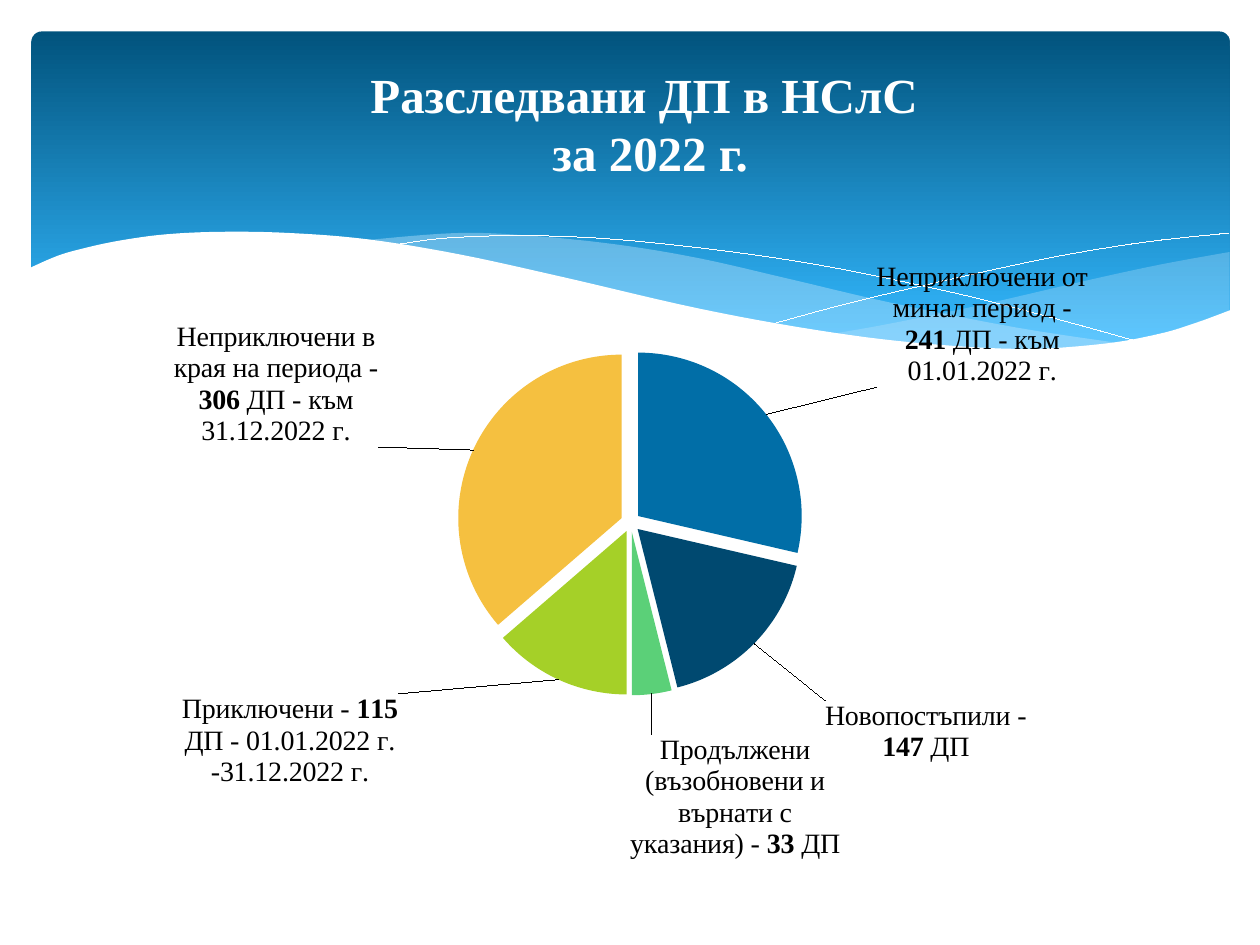
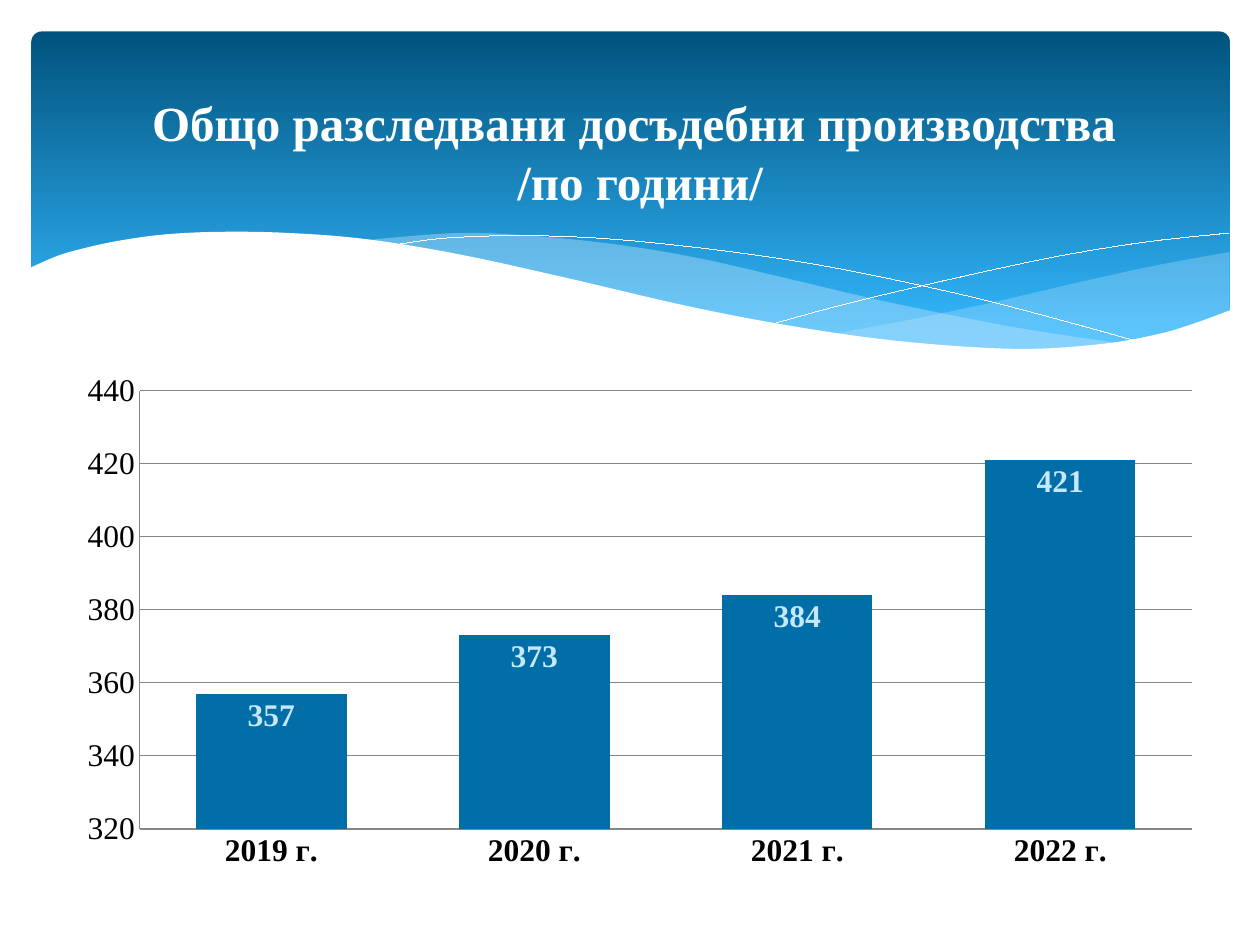
import pptx
import pptx.chart.data
import pptx.dml.color
import pptx.enum.chart
import pptx.enum.shapes
import pptx.enum.text
import pptx.oxml.ns
import pptx.util

Inches, Pt = pptx.util.Inches, pptx.util.Pt
RGBColor = pptx.dml.color.RGBColor
qn = pptx.oxml.ns.qn

# Shared look
FONT = "Times New Roman"
CHART_FONT = "Calibri"
WHITE = RGBColor(0xFF, 0xFF, 0xFF)
BLACK = RGBColor(0, 0, 0)
GRID = RGBColor(0x86, 0x86, 0x86)
BAND_TOP = RGBColor(0x01, 0x53, 0x7D)
BAND_BOTTOM = RGBColor(0x33, 0xB8, 0xFE)
PALE = RGBColor(0xC6, 0xE7, 0xFC)
BLUE = RGBColor(0x01, 0x6E, 0xA7)
NAVY = RGBColor(0x00, 0x49, 0x70)
GREEN = RGBColor(0x5B, 0xD0, 0x78)
LIME = RGBColor(0xA5, 0xD0, 0x28)
AMBER = RGBColor(0xF5, 0xC0, 0x40)

# Waves under the title band: each outline is a run of smooth curves
RIGHT_WAVE = [
    [(9.76, 2), (9.21, 2.1), (8.61, 2.23), (7.79, 2.42), (7.06, 2.57), (6.61, 2.65)],
    [(6.61, 2.65), (7.05, 2.71), (7.57, 2.76), (8.14, 2.78), (8.72, 2.74),
     (9.28, 2.63), (9.76, 2.47)],
]
LEFT_WAVE = [
    [(8.93, 2.73), (8.07, 2.6), (7.06, 2.4), (6.29, 2.22), (5.55, 2.05), (4.89, 1.94),
     (4.2, 1.87), (3.61, 1.85), (2.86, 1.91)],
    [(2.86, 1.91), (3.62, 2.03), (4.49, 2.22), (5.3, 2.4), (6.01, 2.55), (6.8, 2.68),
     (7.48, 2.76), (8.18, 2.78), (8.93, 2.73)],
]
FALLING_LINE = [
    [(3.09, 1.95), (3.53, 1.89), (4.16, 1.87), (4.89, 1.9), (5.82, 2), (6.65, 2.13),
     (7.6, 2.33), (8.31, 2.51), (9.07, 2.72)],
]
RISING_LINE = [
    [(6.13, 2.57), (6.72, 2.41), (7.48, 2.23), (8.36, 2.04), (9.1, 1.92), (9.75, 1.85)],
]
WHITE_WAVE = [
    [(9.77, 2.46), (9.5, 2.56), (9.2, 2.65), (8.75, 2.73), (8.09, 2.77), (7.26, 2.72),
     (6.48, 2.62), (5.55, 2.45), (4.47, 2.2), (3.65, 2.02), (2.92, 1.9), (2.3, 1.85),
     (1.77, 1.84), (1.32, 1.86), (0.95, 1.91), (0.67, 1.97), (0.46, 2.03), (0.23, 2.13)],
    [(0.23, 3.29), (9.77, 3.29)],
]

# Slide 1: category, value, colour, label (text, bold), label shift in inches
PIE_TITLE = "Разследвани ДП в НСлС \vза 2022 г."
PIE_SLICES = [
    ("неприключени от минал период", 241, BLUE,
     [("Неприключени от минал период - ", False), ("241", True),
      (" ДП - към 01.01.2022 г.", False)], (0.83, -0.18)),
    ("новопостъпили", 147, NAVY,
     [("Новопостъпили - ", False), ("147", True), (" ДП", False)], (0.52, 0.41)),
    ("продължени(възобновени и върнати)", 33, GREEN,
     [("Продължени (възобновени и върнати с указания) - ", False), ("33", True),
      (" ДП", False)], (-0.18, 0.26)),
    ("приключени", 115, LIME,
     [("Приключени - ", False), ("115", True),
      (" ДП - 01.01.2022 г. -31.12.2022 г.", False)], (-1.25, 0.06)),
    ("неприключени в края на периода", 306, AMBER,
     [("Неприключени в края на периода - ", False), ("306", True),
      (" ДП - към 31.12.2022 г.", False)], (-0.7, 0)),
]
PIE_BOX = (0.59, 2.02, 8.78, 5.2)
PIE_PLOT = (2.03, 0.75, 4.77, 2.75)

# Slide 2
YEARS_TITLE = "Общо разследвани досъдебни производства \v/по години/"
YEARS = [("2019 г.", 357), ("2020 г.", 373), ("2021 г.", 384), ("2022 г.", 421)]
YEARS_BOX = (0.51, 2.88, 9.13, 4.09)
YEARS_PLOT = (0.6, 0.22, 8.35, 3.48)


def smooth(points, steps=6):
    """Catmull-Rom curve through the points."""
    ends = [points[0], *points, points[-1]]
    curve = [points[0]]
    for a, b, c, d in zip(ends, ends[1:], ends[2:], ends[3:]):
        for k in range(1, steps + 1):
            t = k / steps
            curve.append(tuple(
                (2 * q + (r - p) * t + (2 * p - 5 * q + 4 * r - s) * t ** 2
                 + (3 * q - p - 3 * r + s) * t ** 3) / 2
                for p, q, r, s in zip(a, b, c, d)))
    return curve


def add_wave(s, curves, fill=None, alpha=100):
    """Filled wave, or a white hairline when no fill is given."""
    points = [(Inches(x), Inches(y)) for curve in curves for x, y in smooth(curve)]
    builder = s.shapes.build_freeform(*points[0])
    builder.add_line_segments(points[1:], close=fill is not None)
    sp = builder.convert_to_shape()
    sp.shadow.inherit = False
    if fill is None:
        sp.fill.background()
        sp.line.color.rgb = WHITE
        sp.line.width = Pt(0.01)
        return
    sp.fill.solid()
    sp.fill.fore_color.rgb = fill
    sp.line.fill.background()
    if alpha < 100:
        color = sp._element.spPr.find(qn("a:solidFill"))[0]
        color.append(color.makeelement(qn("a:alpha"), {"val": str(alpha * 1000)}))


def add_base(prs, title, left, top):
    """New slide with gradient band, waves and title."""
    s = prs.slides.add_slide(prs.slide_layouts[6])
    band = s.shapes.add_shape(pptx.enum.shapes.MSO_SHAPE.ROUNDED_RECTANGLE,
                              Inches(0.25), Inches(0.25), Inches(9.51), Inches(2.7))
    band.adjustments[0] = 0.03
    band.shadow.inherit = False
    band.line.fill.background()
    band.fill.gradient()
    band.fill.gradient_angle = 270
    for stop, color, position in zip(band.fill.gradient_stops,
                                     (BAND_TOP, BAND_BOTTOM), (0, 0.9)):
        stop.color.rgb = color
        stop.position = position

    add_wave(s, RIGHT_WAVE, PALE, 29)
    add_wave(s, LEFT_WAVE, PALE, 40)
    add_wave(s, FALLING_LINE)
    add_wave(s, RISING_LINE)
    add_wave(s, WHITE_WAVE, WHITE)

    box = s.shapes.add_textbox(Inches(left), Inches(top), Inches(8.98), Inches(1.37))
    tf = box.text_frame
    tf.word_wrap = True
    tf.vertical_anchor = pptx.enum.text.MSO_ANCHOR.MIDDLE
    tf.text = title
    p = tf.paragraphs[0]
    p.alignment = pptx.enum.text.PP_ALIGN.CENTER
    for r in p.runs:
        set_font(r.font, 28, WHITE, True)
    return s


def set_font(font, size, color=BLACK, bold=False, name=FONT):
    font.name = name
    font.size = Pt(size)
    font.bold = bold
    font.color.rgb = color


def make_layout(parent, values, inner=False):
    """Manual layout element; values are fractions of the chart."""
    layout = parent.makeelement(qn("c:layout"))
    manual = layout.makeelement(qn("c:manualLayout"))
    layout.append(manual)
    settings = [("layoutTarget", "inner"), ("xMode", "edge"), ("yMode", "edge")] if inner else []
    settings += [(name, f"{value:.4f}") for name, value in zip("xywh", values)]
    for name, value in settings:
        manual.append(manual.makeelement(qn("c:" + name), {"val": value}))
    return layout


def add_chart(s, kind, rows, box, plot_box):
    data = pptx.chart.data.CategoryChartData()
    data.categories = [row[0] for row in rows]
    data.add_series("Series 1", [row[1] for row in rows])
    chart = s.shapes.add_chart(kind, *map(Inches, box), data).chart
    chart.has_legend = False
    chart.has_title = False
    set_font(chart.font, 18, name=CHART_FONT)
    area = chart._chartSpace.find(".//" + qn("c:plotArea"))
    for old in area.findall(qn("c:layout")):
        area.remove(old)
    sizes = box[2:] * 2
    area.insert(0, make_layout(area, [v / n for v, n in zip(plot_box, sizes)], True))
    return chart


def build_pie_slide(prs):
    s = add_base(prs, PIE_TITLE, 0.67, 0.29)
    chart = add_chart(s, pptx.enum.chart.XL_CHART_TYPE.PIE, PIE_SLICES, PIE_BOX, PIE_PLOT)
    chart.plots[0].vary_by_categories = True
    series = chart.plots[0].series[0]
    labels = series.data_labels
    labels.show_value = True
    labels.show_category_name = True
    set_font(labels.font, 16)
    for i, (_, _, color, label, shift) in enumerate(PIE_SLICES):
        point = series.points[i]
        point.format.fill.solid()
        point.format.fill.fore_color.rgb = color
        p = point.data_label.text_frame.paragraphs[0]
        for text, bold in label:
            r = p.add_run()
            r.text = text
            set_font(r.font, 16, BLACK, bold)
        point.data_label.position = pptx.enum.chart.XL_LABEL_POSITION.BEST_FIT

        # Move the label away from its slice
        node = series._element.findall(".//" + qn("c:dLbl"))[i]
        node.find(qn("c:showCatName")).set("val", "1")
        for old in node.findall(qn("c:layout")):
            node.remove(old)
        node.insert(1, make_layout(node, [v / n for v, n in zip(shift, PIE_BOX[2:])]))
    ser = series._element
    ser.find(qn("c:dPt")).addprevious(ser.makeelement(qn("c:explosion"), {"val": "6"}))


def build_years_slide(prs):
    s = add_base(prs, YEARS_TITLE, 0.59, 0.52)
    chart = add_chart(s, pptx.enum.chart.XL_CHART_TYPE.COLUMN_CLUSTERED,
                      YEARS, YEARS_BOX, YEARS_PLOT)
    plot = chart.plots[0]
    plot.vary_by_categories = False
    plot.gap_width = 75
    plot.overlap = 40
    fill = plot.series[0].format.fill
    fill.solid()
    fill.fore_color.rgb = BLUE
    labels = plot.series[0].data_labels
    labels.show_value = True
    labels.position = pptx.enum.chart.XL_LABEL_POSITION.INSIDE_END
    set_font(labels.font, 18, PALE, True)

    # Axes
    for axis, bold in ((chart.category_axis, True), (chart.value_axis, False)):
        axis.major_tick_mark = pptx.enum.chart.XL_TICK_MARK.NONE
        axis.format.line.color.rgb = GRID
        set_font(axis.tick_labels.font, 18, BLACK, bold)
    scale = chart.value_axis
    scale.minimum_scale, scale.maximum_scale, scale.major_unit = 320, 440, 20
    scale.major_gridlines.format.line.color.rgb = GRID


def main():
    prs = pptx.Presentation()
    prs.slide_width, prs.slide_height = Inches(10), Inches(7.5)
    build_pie_slide(prs)
    build_years_slide(prs)
    prs.save("out.pptx")


if __name__ == "__main__":
    main()
